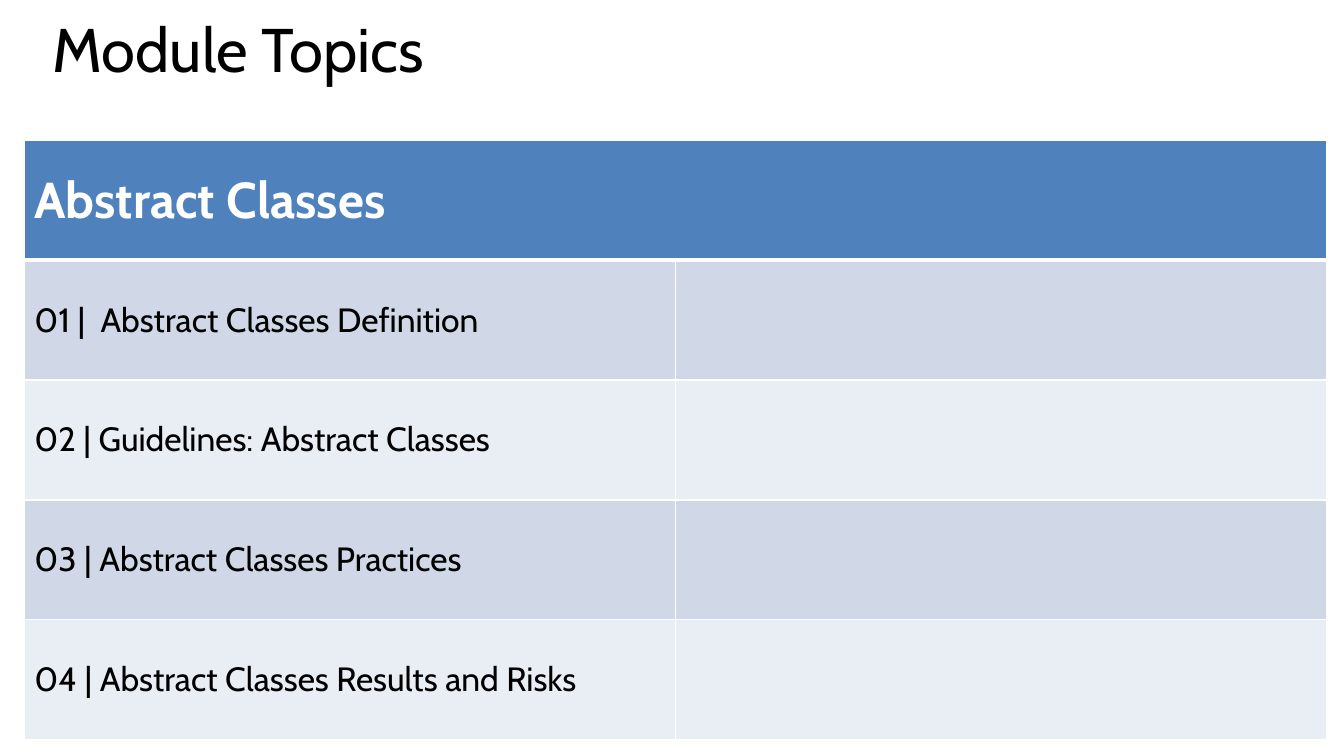
from dataclasses import dataclass
from typing import Any

from lxml.etree import SubElement
from pptx import Presentation
from pptx.dml.color import RGBColor as Rgb
from pptx.enum.text import MSO_ANCHOR as Anchor, PP_ALIGN as Align
from pptx.oxml.ns import qn
from pptx.util import Pt


@dataclass(frozen=True)
class Theme:
    face: str = "Cabin"
    ink: str = "000000"
    paper: str = "FFFFFF"
    header: str = "4F81BD"
    bands: tuple[str, str] = ("D0D8E8", "E9EDF4")
    title_size: float = 44
    header_size: float = 36
    topic_size: float = 24
    rule: float = 1
    header_rule: float = 3


@dataclass(frozen=True)
class TopicRow:
    label: str
    fill: str
    ink: str
    size: float
    bold: bool
    top_rule: float
    bottom_rule: float


THEME = Theme()
SLIDE_SIZE = (960, 540)
TITLE_BOX = (30.24, 14.4, 907.2, 83.52)
TABLE_BOX = (17.28, 100.08, 930.24, 428.4)
COLUMNS = 2
HEADING = "Abstract Classes"
TOPICS = (
    "01 |  Abstract Classes Definition",
    "02 | Guidelines: Abstract Classes",
    "03 | Abstract Classes Practices",
    "04 | Abstract Classes Results and Risks",
)


def apply(target: Any, formats: dict[str, Any]) -> None:
    for attribute, value in formats.items():
        setattr(target, attribute, value)


def write(frame: Any, text: str, size: float, ink: str, bold: bool) -> None:
    paragraph = frame.paragraphs[0]
    paragraph.alignment = Align.LEFT
    run = paragraph.add_run()
    run.text = text
    apply(run.font, {"name": THEME.face, "size": Pt(size), "bold": bold})
    run.font.color.rgb = Rgb.from_string(ink)


def rule_cell(cell: Any, top: float, bottom: float) -> None:
    """Draw the four borders; call before filling, as the schema puts lines first."""
    properties = cell._tc.get_or_add_tcPr()
    widths = {"lnL": THEME.rule, "lnR": THEME.rule, "lnT": top, "lnB": bottom}
    for side, width in widths.items():
        line = SubElement(properties, qn(f"a:{side}"), w=str(Pt(width)))
        fill = SubElement(line, qn("a:solidFill"))
        SubElement(fill, qn("a:srgbClr"), val=THEME.paper)


def add_title(slide: Any) -> None:
    title = slide.shapes.title
    apply(title, dict(zip(("left", "top", "width", "height"), map(Pt, TITLE_BOX))))
    apply(title.text_frame, {
        "vertical_anchor": Anchor.TOP, "word_wrap": True,
        "margin_left": Pt(7.2), "margin_right": Pt(7.2),
        "margin_top": Pt(3.6), "margin_bottom": Pt(3.6),
    })
    write(title.text_frame, "Module Topics", THEME.title_size, THEME.ink, False)
    title.text_frame.paragraphs[0].line_spacing = 0.8


def topic_rows() -> list[TopicRow]:
    rows = [TopicRow(HEADING, THEME.header, THEME.paper, THEME.header_size, True,
                     THEME.rule, THEME.header_rule)]
    for index, topic in enumerate(TOPICS):
        rows.append(TopicRow(topic, THEME.bands[index % 2], THEME.ink, THEME.topic_size,
                             False, THEME.rule if index else THEME.header_rule, THEME.rule))
    return rows


def add_topics(slide: Any, rows: list[TopicRow]) -> None:
    table = slide.shapes.add_table(len(rows), COLUMNS, *map(Pt, TABLE_BOX)).table
    for row_index, row in enumerate(rows):
        for column in range(COLUMNS):
            cell = table.cell(row_index, column)
            rule_cell(cell, row.top_rule, row.bottom_rule)
            cell.fill.solid()
            cell.fill.fore_color.rgb = Rgb.from_string(row.fill)
            cell.vertical_anchor = Anchor.MIDDLE
        write(table.cell(row_index, 0).text_frame, row.label, row.size, row.ink, row.bold)
    table.cell(0, 0).merge(table.cell(0, COLUMNS - 1))


def main() -> None:
    deck = Presentation()
    apply(deck, dict(zip(("slide_width", "slide_height"), map(Pt, SLIDE_SIZE))))
    slide = deck.slides.add_slide(deck.slide_layouts.get_by_name("Title Only"))
    add_title(slide)
    add_topics(slide, topic_rows())
    deck.save("out.pptx")


if __name__ == "__main__":
    main()
